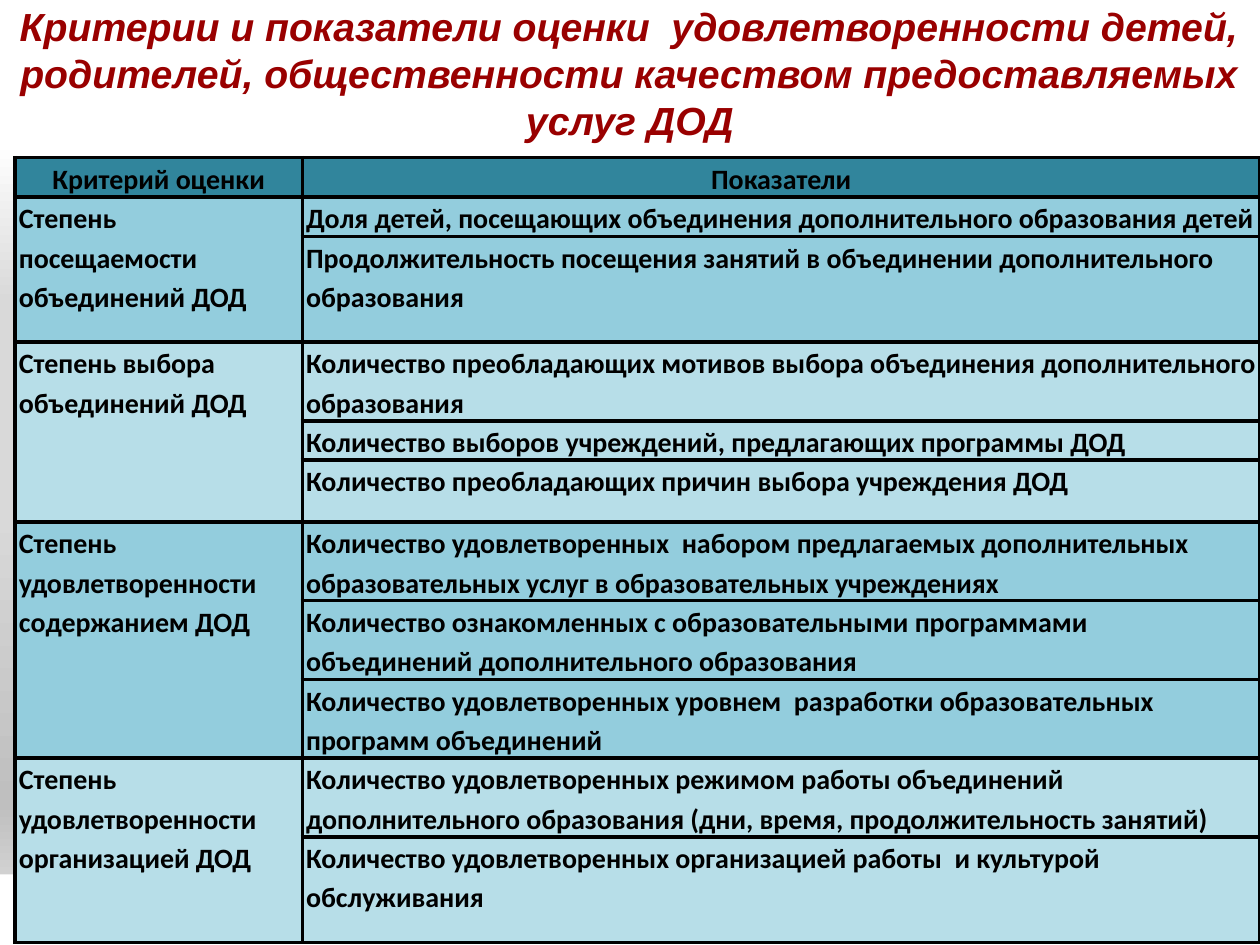
from dataclasses import dataclass

from lxml import etree
from pptx import Presentation
from pptx.dml.color import RGBColor
from pptx.enum.shapes import MSO_SHAPE
from pptx.enum.text import MSO_ANCHOR, MSO_AUTO_SIZE, PP_ALIGN
from pptx.oxml import parse_xml
from pptx.oxml.ns import nsdecls, qn
from pptx.util import Inches, Pt

RECT = MSO_SHAPE.RECTANGLE
CENTER, LEFT = PP_ALIGN.CENTER, PP_ALIGN.LEFT
MIDDLE, TOP = MSO_ANCHOR.MIDDLE, MSO_ANCHOR.TOP
NO_FIT = MSO_AUTO_SIZE.NONE


@dataclass(frozen=True)
class Theme:
    title_font: str = "Arial"
    title_size: float = 22.4
    title_color: str = "990000"
    table_font: str = "Calibri"
    table_size: float = 16
    ink: str = "000000"
    paper: str = "FFFFFF"
    header: str = "31859C"
    bands: tuple = ("93CDDD", "B7DEE8")
    border: float = 2.25
    gradient: tuple = ((0, "FFFFFF"), (15, "FFFFFF"), (32, "D9D9D9"),
                       (54, "D9D9D9"), (85, "BFBFBF"), (100, "E6E6E6"))


THEME = Theme()
TITLE = ("Критерии и показатели оценки  удовлетворенности детей, родителей, "
         "общественности качеством предоставляемых услуг ДОД")
HEADER = ("Критерий оценки", "Показатели")
HEADER_HEIGHT = 0.28
COLUMNS = (2.28, 7.6)

# Each criterion with its indicators and their row heights
CRITERIA = (
    ("Степень посещаемости объединений ДОД", (
        ("Доля детей, посещающих объединения дополнительного образования детей", 0.28),
        ("Продолжительность посещения занятий в объединении дополнительного образования", 0.84))),
    ("Степень выбора объединений ДОД", (
        ("Количество преобладающих мотивов выбора объединения дополнительного образования", 0.35),
        ("Количество выборов учреждений, предлагающих программы ДОД", 0.28),
        ("Количество преобладающих причин выбора учреждения ДОД", 0.49))),
    ("Степень удовлетворенности содержанием ДОД", (
        ("Количество удовлетворенных  набором предлагаемых дополнительных "
         "образовательных услуг в образовательных учреждениях", 0.56),
        ("Количество ознакомленных с образовательными программами "
         "объединений дополнительного образования", 0.35),
        ("Количество удовлетворенных уровнем  разработки образовательных "
         "программ объединений", 0.55))),
    ("Степень удовлетворенности организацией ДОД", (
        ("Количество удовлетворенных режимом работы объединений дополнительного "
         "образования (дни, время, продолжительность занятий)", 0.56),
        ("Количество удовлетворенных организацией работы  и культурой обслуживания", 0.84))),
)


def rgb(color):
    return RGBColor.from_string(color)


def style_font(font, name, size, color, italic=False):
    font.name, font.size, font.bold, font.italic = name, Pt(size), True, italic
    font.color.rgb = rgb(color)


def paint_background(s):
    fill = s.background.fill
    fill.gradient()
    stops = "".join(f'<a:gs pos="{pos * 1000}"><a:srgbClr val="{color}"/></a:gs>'
                    for pos, color in THEME.gradient)
    grad = parse_xml(f'<a:gradFill {nsdecls("a")} rotWithShape="1"><a:gsLst>{stops}</a:gsLst>'
                     '<a:lin ang="5400000" scaled="0"/></a:gradFill>')
    old = s.background._cSld.find(".//" + qn("a:gradFill"))
    old.getparent().replace(old, grad)


def add_footer_band(s, left, top, width, height):
    sp = s.shapes.add_shape(RECT, left, top, width, height)
    sp.shadow.inherit = False
    sp.fill.solid()
    sp.fill.fore_color.rgb = rgb(THEME.paper)
    sp.line.fill.background()


def set_title(s, left, top, width, height):
    sp = s.shapes.title
    sp.left, sp.top, sp.width, sp.height = left, top, width, height
    sp.fill.solid()
    sp.fill.fore_color.rgb = rgb(THEME.paper)
    tf = sp.text_frame
    tf.text = TITLE
    tf.word_wrap, tf.auto_size, tf.vertical_anchor = True, NO_FIT, MIDDLE
    p = tf.paragraphs[0]
    p.alignment = CENTER
    style_font(p.runs[0].font, THEME.title_font, THEME.title_size, THEME.title_color, True)


def set_borders(cell):
    tc_pr = cell._tc.get_or_add_tcPr()
    for i, side in enumerate(("lnL", "lnR", "lnT", "lnB")):
        ln = etree.Element(qn(f"a:{side}"), w=str(Pt(THEME.border)))
        fill = etree.SubElement(ln, qn("a:solidFill"))
        etree.SubElement(fill, qn("a:srgbClr"), val=THEME.ink)
        tc_pr.insert(i, ln)


def fill_cell(cell, color, text="", align=LEFT):
    cell.fill.solid()
    cell.fill.fore_color.rgb = rgb(color)
    cell.margin_left = cell.margin_right = Inches(0.03)
    cell.margin_top = cell.margin_bottom = 0
    cell.vertical_anchor = TOP
    set_borders(cell)
    p = cell.text_frame.paragraphs[0]
    p.text, p.alignment, p.line_spacing = text, align, 1.15
    style_font(p.font, THEME.table_font, THEME.table_size, THEME.ink)
    for r in p.runs:
        style_font(r.font, THEME.table_font, THEME.table_size, THEME.ink)


def add_criteria_table(s, left, top, width, height):
    heights = [HEADER_HEIGHT] + [h for _, items in CRITERIA for _, h in items]
    table = s.shapes.add_table(len(heights), len(COLUMNS), left, top, width, height).table
    for column, share in zip(table.columns, COLUMNS):
        column.width = int(width * share / sum(COLUMNS))
    for row, h in zip(table.rows, heights):
        row.height = Inches(h)

    # Header row
    for col, text in enumerate(HEADER):
        fill_cell(table.cell(0, col), THEME.header, text, CENTER)

    # One merged criterion cell beside its indicators, in alternating bands
    first = 1
    for i, (criterion, items) in enumerate(CRITERIA):
        band = THEME.bands[i % len(THEME.bands)]
        for k, (indicator, _) in enumerate(items):
            fill_cell(table.cell(first + k, 0), band, "" if k else criterion)
            fill_cell(table.cell(first + k, 1), band, indicator)
        last = first + len(items) - 1
        table.cell(first, 0).merge(table.cell(last, 0))
        first = last + 1


def main():
    prs = Presentation()
    prs.slide_width, prs.slide_height = Inches(10), Inches(7.5)
    s = prs.slides.add_slide(prs.slide_layouts[5])
    paint_background(s)
    add_footer_band(s, 0, Inches(6.94), prs.slide_width, Inches(0.56))
    set_title(s, 0, 0, prs.slide_width, Inches(1.15))
    add_criteria_table(s, Inches(0.12), Inches(1.25), Inches(9.88), Inches(6.14))
    prs.save("out.pptx")


if __name__ == "__main__":
    main()
